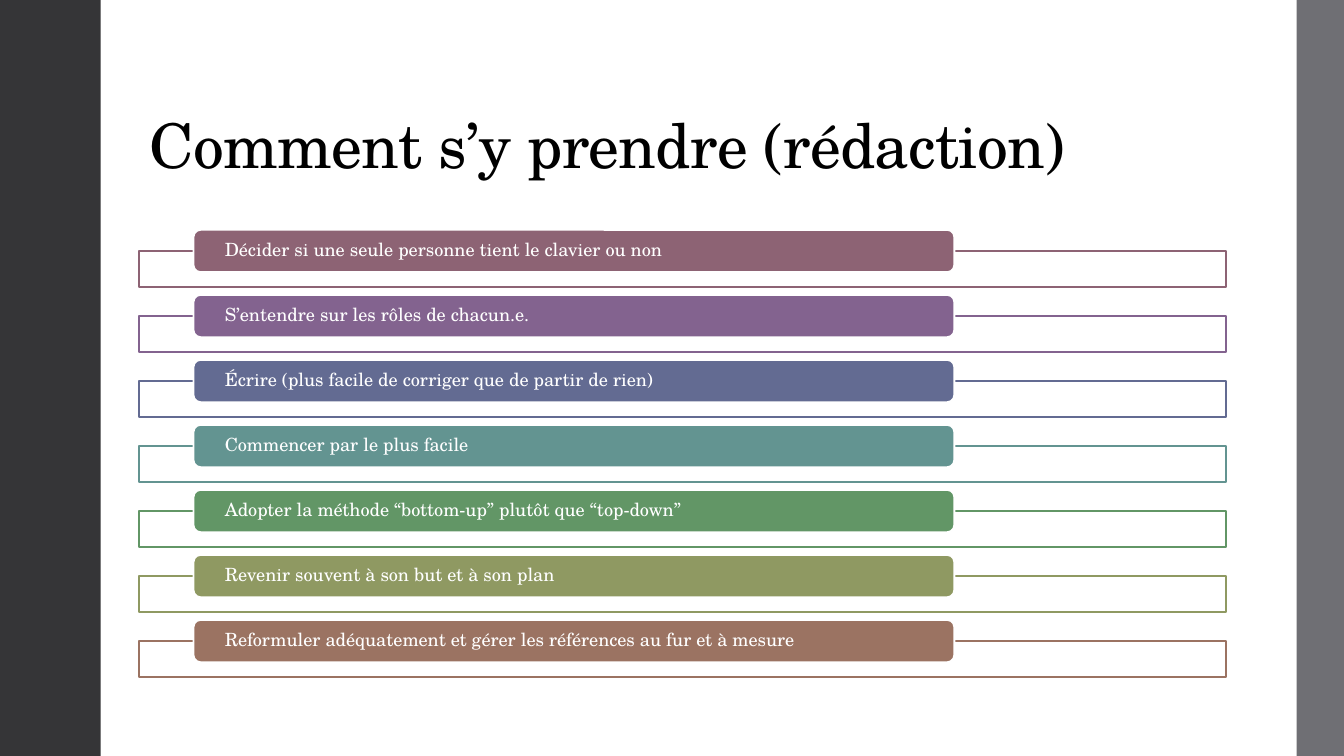
import dataclasses

import pptx
import pptx.dml.color
import pptx.enum.shapes
import pptx.enum.text
import pptx.util

Inches = pptx.util.Inches
SHAPES = pptx.enum.shapes.MSO_SHAPE
ANCHORS = pptx.enum.text.MSO_ANCHOR


@dataclasses.dataclass(frozen=True)
class Theme:
    font: str = "TeX Gyre Schola"
    title_size: float = 44
    step_size: float = 13
    title_color: str = "000000"
    white: str = "FFFFFF"
    left_band: str = "353537"
    right_band: str = "6F6F74"
    frame_line: float = 1.1
    bar_line: float = 1.35


@dataclasses.dataclass(frozen=True)
class Box:
    left: float
    top: float
    width: float
    height: float

    def lengths(self):
        return [Inches(value) for value in dataclasses.astuple(self)]


THEME = Theme()
SLIDE = Box(0, 0, 13.33, 7.5)
TITLE = "Comment s’y prendre (rédaction)"
STEPS = [
    ("Décider si une seule personne tient le clavier ou non", "8D6374"),
    ("S’entendre sur les rôles de chacun.e.", "83638F"),
    ("Écrire (plus facile de corriger que de partir de rien)", "636B92"),
    ("Commencer par le plus facile", "639491"),
    ("Adopter la méthode “bottom-up” plutôt que “top-down”", "629666"),
    ("Revenir souvent à son but et à son plan", "8F9962"),
    ("Reformuler adéquatement et gérer les références au fur et à mesure", "9B7362"),
]


def rgb(color):
    return pptx.dml.color.RGBColor.from_string(color)


def apply(target, formats):
    for name, value in formats.items():
        setattr(target, name, value)


def add_block(slide, kind, box, fill, line=None, line_width=0):
    shape = slide.shapes.add_shape(kind, *box.lengths())
    shape.shadow.inherit = False
    shape.fill.solid()
    shape.fill.fore_color.rgb = rgb(fill)
    if line:
        shape.line.color.rgb = rgb(line)
        shape.line.width = pptx.util.Pt(line_width)
    else:
        shape.line.fill.background()
    return shape


def write_text(shape, text, size, color, frame_formats):
    frame = shape.text_frame
    apply(frame, {"word_wrap": True, **frame_formats})
    paragraph = frame.paragraphs[0]
    apply(paragraph, {"alignment": pptx.enum.text.PP_ALIGN.LEFT, "line_spacing": 0.9})
    run = paragraph.add_run()
    run.text = text
    apply(run.font, {"name": THEME.font, "size": pptx.util.Pt(size)})
    run.font.color.rgb = rgb(color)
    return run


def add_title(slide, box):
    title = slide.shapes.title
    apply(title, dict(zip(("left", "top", "width", "height"), box.lengths())))
    run = write_text(title, TITLE, THEME.title_size, THEME.title_color, {
        "vertical_anchor": ANCHORS.BOTTOM,
        "auto_size": pptx.enum.text.MSO_AUTO_SIZE.NONE,
    })
    # Slightly tightened letters
    run.font._element.set("spc", "-50")


def add_side_bands(slide, box):
    right_edge = box.left + box.width
    bands = [(box.left, 1, THEME.left_band),
             (12.86, right_edge - 12.86, THEME.right_band)]
    for left, width, color in bands:
        add_block(slide, SHAPES.RECTANGLE, Box(left, box.top, width, box.height), color)


def add_step(slide, box, text, color):
    # Outlined frame behind the lower part of the bar
    frame_drop = 0.21
    frame = Box(box.left, box.top + frame_drop, box.width, box.height - frame_drop)
    add_block(slide, SHAPES.RECTANGLE, frame, THEME.white, color, THEME.frame_line)
    # Coloured bar holding the text
    bar_box = Box(box.left + box.width * 0.05, box.top, box.width * 0.7, 0.42)
    bar = add_block(slide, SHAPES.ROUNDED_RECTANGLE, bar_box, color,
                    THEME.white, THEME.bar_line)
    write_text(bar, text, THEME.step_size, THEME.white, {
        "vertical_anchor": ANCHORS.MIDDLE,
        "margin_left": Inches(0.29), "margin_right": Inches(0.29),
        "margin_top": 0, "margin_bottom": 0,
    })


def add_step_list(slide, box, steps):
    row_height = 0.57
    pitch = (box.height - row_height) / (len(steps) - 1)
    for row, (text, color) in enumerate(steps):
        row_box = Box(box.left, box.top + row * pitch, box.width, row_height)
        add_step(slide, row_box, text, color)


def main():
    presentation = pptx.Presentation()
    presentation.slide_width = Inches(SLIDE.width)
    presentation.slide_height = Inches(SLIDE.height)
    slide = presentation.slides.add_slide(presentation.slide_layouts[5])
    slide.background.fill.solid()
    slide.background.fill.fore_color.rgb = rgb(THEME.white)

    add_title(slide, Box(1.38, 0.4, 10.78, 1.45))
    add_side_bands(slide, SLIDE)
    add_step_list(slide, Box(1.38, 2.28, 10.78, 4.44), STEPS)
    presentation.save("out.pptx")


if __name__ == "__main__":
    main()
